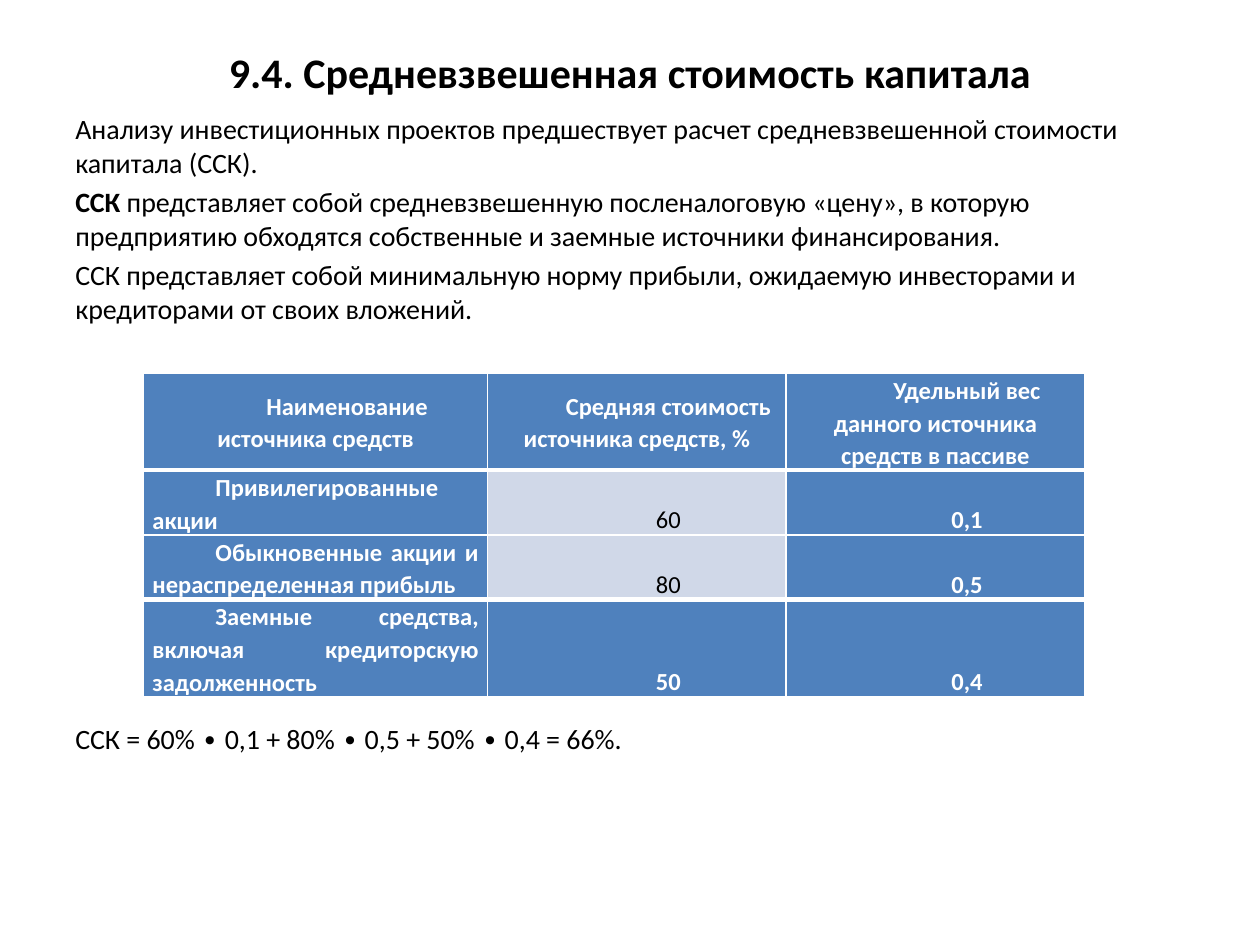
"""Build the slide on the weighted average cost of capital."""
from lxml.etree import SubElement
from pptx import Presentation
from pptx.dml.color import RGBColor
from pptx.enum.text import MSO_ANCHOR, PP_ALIGN
from pptx.oxml.ns import qn
from pptx.util import Inches, Pt

COLORS = {"text": "000000", "white": "FFFFFF", "blue": "4F81BD", "pale": "D0D8E8"}
FONT = "Calibri"
TITLE = "9.4. Средневзвешенная стоимость капитала"
INTRO = [
    [("Анализу инвестиционных проектов предшествует расчет средневзвешенной "
      "стоимости капитала (ССК).", False)],
    [("ССК ", True),
     ("представляет собой средневзвешенную посленалоговую «цену», в которую "
      "предприятию обходятся собственные и заемные источники финансирования.", False)],
    [("ССК представляет собой минимальную норму прибыли, ожидаемую инвесторами "
      "и кредиторами от своих вложений.", False)],
]
FORMULA = "ССК = 60% ∙ 0,1 + 80% ∙ 0,5 + 50% ∙ 0,4 = 66%."
ROWS = [
    ("Наименование источника средств", "Средняя стоимость источника средств, %",
     "Удельный вес данного источника средств в пассиве"),
    ("Привилегированные акции", "60", "0,1"),
    ("Обыкновенные акции и нераспределенная прибыль", "80", "0,5"),
    ("Заемные средства, включая кредиторскую задолженность", "50", "0,4"),
]
COLUMN_WIDTHS = [2.73, 2.37, 2.37]
LINES_PER_ROW = [3, 2, 2, 3]
TABLE_LEFT, TABLE_TOP, TABLE_HEIGHT = 1.14, 2.96, 2.57


def style(paragraph, size, color="text", bold=False):
    font = paragraph.font
    font.name, font.size, font.bold = FONT, Pt(size), bold
    font.color.rgb = RGBColor.from_string(COLORS[color])


def add_text(page, position, paragraphs, size, bold=False, space=0,
             align=PP_ALIGN.LEFT, anchor=MSO_ANCHOR.TOP):
    frame = page.shapes.add_textbox(*map(Inches, position)).text_frame
    frame.word_wrap, frame.vertical_anchor = True, anchor
    for index, spans in enumerate(paragraphs):
        paragraph = frame.add_paragraph() if index else frame.paragraphs[0]
        paragraph.alignment, paragraph.space_before = align, Pt(space)
        style(paragraph, size, bold=bold)
        for text, strong in spans:
            span = paragraph.add_run()
            span.text = text
            if strong:
                span.font.bold = True


def add_borders(cell, widths):
    properties = cell._tc.get_or_add_tcPr()
    for side, width in widths.items():
        line = SubElement(properties, qn(f"a:ln{side}"), w=str(Pt(width)))
        fill = SubElement(line, qn("a:solidFill"))
        SubElement(fill, qn("a:srgbClr"), val=COLORS["white"])


def fill_cell(cell, text, row, column):
    header, last = row == 0, row == len(ROWS) - 1
    plain = column == 1 and not header and not last
    add_borders(cell, {"L": 1, "R": 1, "T": 3 if row in (1, 3) else 1,
                       "B": 3 if row in (0, 2) else 1})
    cell.fill.solid()
    cell.fill.fore_color.rgb = RGBColor.from_string(COLORS["pale" if plain else "blue"])
    cell.margin_left = cell.margin_right = Inches(0.07)
    cell.margin_top = cell.margin_bottom = 0
    label = column == 0 and not header
    cell.vertical_anchor = (MSO_ANCHOR.MIDDLE if header else
                            MSO_ANCHOR.TOP if label else MSO_ANCHOR.BOTTOM)
    paragraph = cell.text_frame.paragraphs[0]
    paragraph.text = text
    paragraph.alignment = PP_ALIGN.JUSTIFY if label else PP_ALIGN.CENTER
    paragraph.line_spacing = 1.1
    paragraph._p.get_or_add_pPr().set("indent", str(Inches(0.5)))
    style(paragraph, 14, "text" if plain else "white", not plain)


def add_sources_table(page):
    table = page.shapes.add_table(
        len(ROWS), len(COLUMN_WIDTHS), Inches(TABLE_LEFT), Inches(TABLE_TOP),
        Inches(sum(COLUMN_WIDTHS)), Inches(TABLE_HEIGHT)).table
    table.first_row = table.horz_banding = False
    for column, width in zip(table.columns, COLUMN_WIDTHS):
        column.width = Inches(width)
    for row, lines in zip(table.rows, LINES_PER_ROW):
        row.height = Inches(TABLE_HEIGHT * lines / sum(LINES_PER_ROW))
    for row, texts in enumerate(ROWS):
        for column, text in enumerate(texts):
            fill_cell(table.cell(row, column), text, row, column)


def main():
    deck = Presentation()
    deck.slide_width, deck.slide_height = Inches(10), Inches(7.5)
    page = deck.slides.add_slide(deck.slide_layouts[6])
    add_text(page, (0.5, 0.3, 9, 0.54), [[(TITLE, False)]], 24, bold=True,
             align=PP_ALIGN.CENTER, anchor=MSO_ANCHOR.MIDDLE)
    add_text(page, (0.5, 0.84, 9, 1.9), INTRO, 16, space=3.2)
    add_sources_table(page)
    add_text(page, (0.5, 5.68, 9, 0.4), [[(FORMULA, False)]], 16, space=3.2)
    deck.save("out.pptx")


if __name__ == "__main__":
    main()
